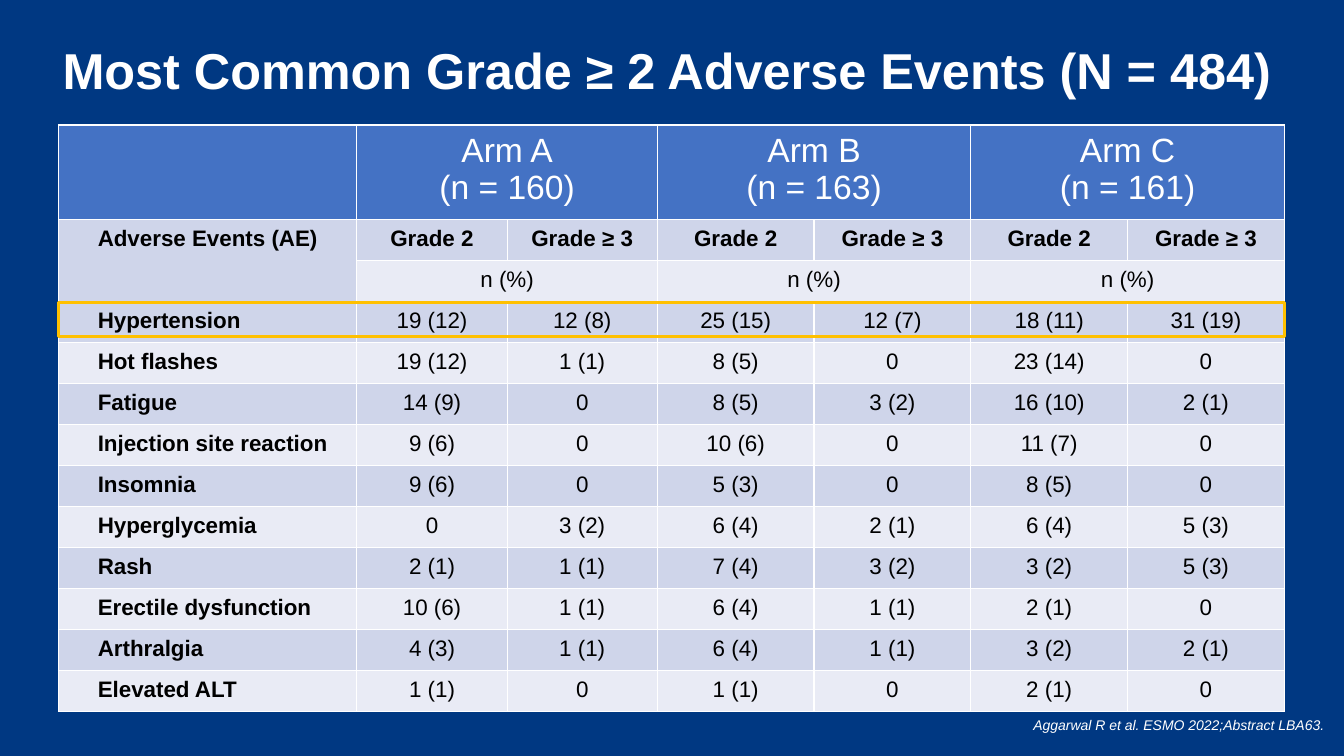
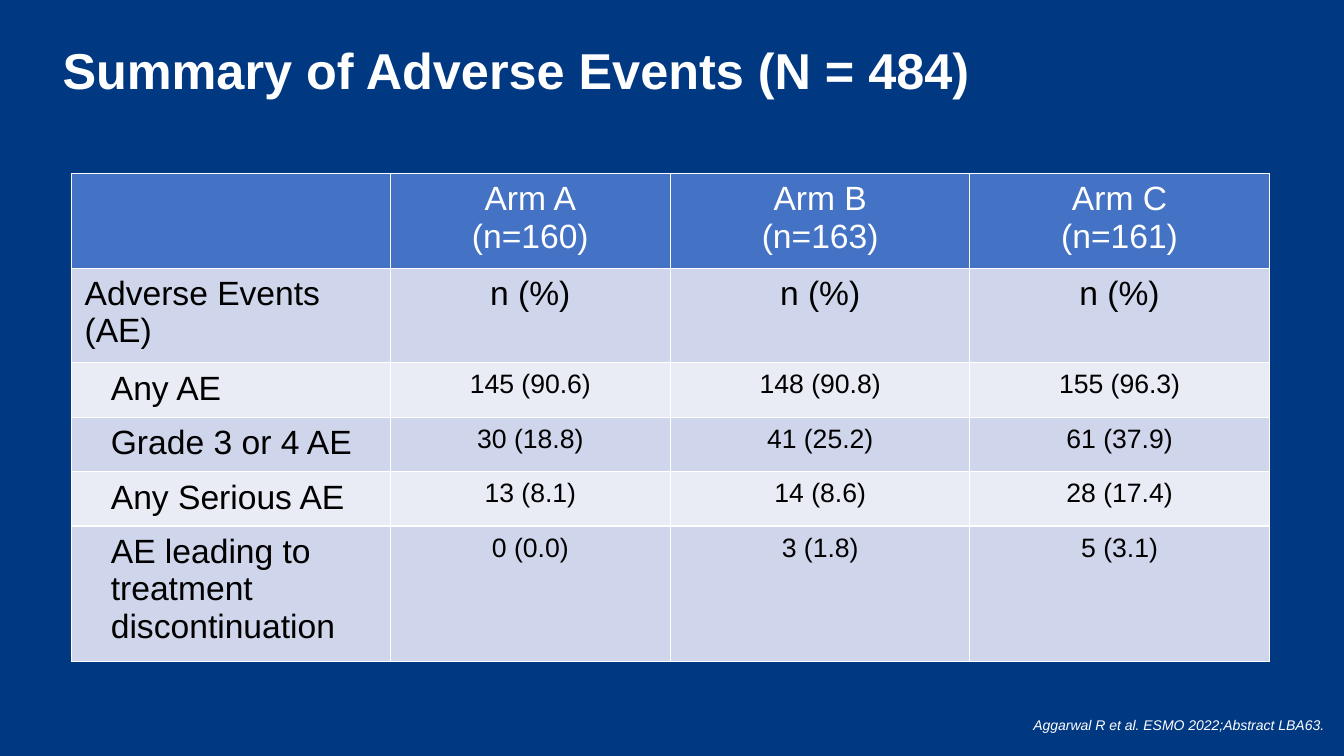
from lxml import etree
from pptx import Presentation
from pptx.dml.color import RGBColor
from pptx.enum.shapes import MSO_SHAPE
from pptx.enum.text import MSO_ANCHOR, MSO_AUTO_SIZE, PP_ALIGN
from pptx.oxml.ns import qn
from pptx.util import Inches, Pt

LEFT, CENTER, RIGHT = PP_ALIGN.LEFT, PP_ALIGN.CENTER, PP_ALIGN.RIGHT
MIDDLE = MSO_ANCHOR.MIDDLE
NO_AUTOFIT = MSO_AUTO_SIZE.NONE
RECTANGLE = MSO_SHAPE.RECTANGLE

NAVY = RGBColor(0x00, 0x38, 0x82)
BLUE = RGBColor(0x44, 0x72, 0xC4)
BAND_DARK = RGBColor(0xCF, 0xD5, 0xEA)
BAND_LIGHT = RGBColor(0xE9, 0xEB, 0xF5)
GOLD = RGBColor(0xFF, 0xC0, 0x00)
WHITE = RGBColor(0xFF, 0xFF, 0xFF)
BLACK = RGBColor(0x00, 0x00, 0x00)

FONT = "Arial"
CITATION = "Aggarwal R et al. ESMO 2022;Abstract LBA63."
TITLES = ["Most Common Grade ≥ 2 Adverse Events (N = 484)", "Summary of Adverse Events (N = 484)"]

COMMON_EVENTS = [
    ["", "Arm A\n(n = 160)", "", "Arm B\n(n = 163)", "", "Arm C\n(n = 161)", ""],
    ["Adverse Events (AE)"] + ["Grade 2", "Grade ≥ 3"] * 3,
    [""] + ["n (%)", ""] * 3,
    ["Hypertension", "19 (12)", "12 (8)", "25 (15)", "12 (7)", "18 (11)", "31 (19)"],
    ["Hot flashes", "19 (12)", "1 (1)", "8 (5)", "0", "23 (14)", "0"],
    ["Fatigue", "14 (9)", "0", "8 (5)", "3 (2)", "16 (10)", "2 (1)"],
    ["Injection site reaction", "9 (6)", "0", "10 (6)", "0", "11 (7)", "0"],
    ["Insomnia", "9 (6)", "0", "5 (3)", "0", "8 (5)", "0"],
    ["Hyperglycemia", "0", "3 (2)", "6 (4)", "2 (1)", "6 (4)", "5 (3)"],
    ["Rash", "2 (1)", "1 (1)", "7 (4)", "3 (2)", "3 (2)", "5 (3)"],
    ["Erectile dysfunction", "10 (6)", "1 (1)", "6 (4)", "1 (1)", "2 (1)", "0"],
    ["Arthralgia", "4 (3)", "1 (1)", "6 (4)", "1 (1)", "3 (2)", "2 (1)"],
    ["Elevated ALT", "1 (1)", "0", "1 (1)", "0", "2 (1)", "0"],
]
EVENT_SUMMARY = [
    ["", "Arm A\n(n=160)", "Arm B\n(n=163)", "Arm C\n(n=161)"],
    ["Adverse Events (AE)", "n (%)", "n (%)", "n (%)"],
    ["Any AE", "145 (90.6)", "148 (90.8)", "155 (96.3)"],
    ["Grade 3 or 4 AE", "30 (18.8)", "41 (25.2)", "61 (37.9)"],
    ["Any Serious AE", "13 (8.1)", "14 (8.6)", "28 (17.4)"],
    ["AE leading to treatment discontinuation", "0 (0.0)", "3 (1.8)", "5 (3.1)"],
]


def write_text(frame, text, *, size, color=WHITE, bold=False, italic=False,
               align=CENTER, indent=0, line_spacing=None):
    """Fill the frame with one paragraph for each line of text."""
    for index, line in enumerate(text.split("\n")):
        para = frame.add_paragraph() if index else frame.paragraphs[0]
        para.alignment = align
        para.line_spacing = line_spacing
        if indent:
            para._p.get_or_add_pPr().set("marL", str(Inches(indent)))
        span = para.add_run()
        span.text = line
        span.font.name = FONT
        span.font.size = Pt(size)
        span.font.bold = bold
        span.font.italic = italic
        span.font.color.rgb = color


def add_banded_table(slide, left, top, widths, heights, rows):
    """Add a table with a blue header, two band colours and white borders."""
    table = slide.shapes.add_table(
        len(rows), len(widths), Inches(left), Inches(top),
        Inches(sum(widths)), Inches(sum(heights))).table
    for column, width in zip(table.columns, widths):
        column.width = Inches(width)
    for row_index, height in enumerate(heights):
        table.rows[row_index].height = Inches(height)
        band = BAND_DARK if row_index % 2 else BAND_LIGHT
        for cell in table.rows[row_index].cells:
            cell.fill.solid()
            cell.fill.fore_color.rgb = band if row_index else BLUE
            cell.margin_left = cell.margin_right = Inches(0.13)
            cell.margin_top = cell.margin_bottom = Inches(0.07)
            properties = cell._tc.get_or_add_tcPr()
            for order, side in enumerate(("a:lnL", "a:lnR", "a:lnT", "a:lnB")):
                border = etree.Element(qn(side), w=str(Pt(1)))
                border_fill = etree.SubElement(border, qn("a:solidFill"))
                etree.SubElement(border_fill, qn("a:srgbClr"), val=str(WHITE))
                properties.insert(order, border)
    return table


deck = Presentation()
deck.slide_width = Inches(13.33)
deck.slide_height = Inches(7.5)
background = deck.slide_master.background.fill
background.solid()
background.fore_color.rgb = NAVY
title_only = deck.slide_layouts[5]

slides = []
for title_text in TITLES:
    slide = deck.slides.add_slide(title_only)
    title = slide.shapes.title
    title.left, title.top = Inches(0.52), Inches(0.41)
    title.width, title.height = Inches(12.26), Inches(0.63)
    title.text_frame.auto_size = NO_AUTOFIT
    title.text_frame.vertical_anchor = MIDDLE
    write_text(title.text_frame, title_text, size=36, bold=True, align=LEFT, line_spacing=0.9)

    citation = slide.shapes.add_textbox(Inches(10.12), Inches(7.06), Inches(3.11), Inches(0.27))
    citation.text_frame.word_wrap = True
    write_text(citation.text_frame, CITATION, size=10, italic=True, align=RIGHT)
    slides.append(slide)
common_slide, summary_slide = slides

# Most common adverse events
table_width, name_width, arm_a_width = 12.16, 2.96, 1.49
other_width = (table_width - name_width - 2 * arm_a_width) / 4
common_table = add_banded_table(
    common_slide, 0.58, 1.24, [name_width] + [arm_a_width] * 2 + [other_width] * 4,
    [0.93] + [0.4] * 12, COMMON_EVENTS)
common_table.cell(1, 0).merge(common_table.cell(2, 0))
for row_index in (0, 2):
    for col_index in (1, 3, 5):
        common_table.cell(row_index, col_index).merge(common_table.cell(row_index, col_index + 1))

for row_index, row in enumerate(COMMON_EVENTS):
    for col_index, text in enumerate(row):
        if not text:
            continue
        frame = common_table.cell(row_index, col_index).text_frame
        if row_index == 0:
            write_text(frame, text, size=24)
        elif col_index == 0 and row_index > 2:
            write_text(frame, text, size=16, color=BLACK, bold=True, align=LEFT, indent=0.26)
        else:
            write_text(frame, text, size=16, color=BLACK, bold=row_index == 1)

highlight = common_slide.shapes.add_shape(
    RECTANGLE, Inches(0.58), Inches(3), Inches(table_width), Inches(0.34))
highlight.shadow.inherit = False
highlight.fill.background()
highlight.line.color.rgb = GOLD
highlight.line.width = Pt(2.5)

# Summary of adverse events
summary_table = add_banded_table(
    summary_slide, 0.71, 1.72, [3.16, 2.78, 2.97, 2.97],
    [0.93, 0.93, 0.54, 0.54, 0.54, 1.33], EVENT_SUMMARY)
for row_index, row in enumerate(EVENT_SUMMARY):
    for col_index, text in enumerate(row):
        if not text:
            continue
        frame = summary_table.cell(row_index, col_index).text_frame
        if row_index == 0:
            write_text(frame, text, size=24)
        elif col_index == 0:
            write_text(frame, text, size=24, color=BLACK, align=LEFT,
                       indent=0.26 if row_index > 1 else 0)
        else:
            write_text(frame, text, size=24 if row_index == 1 else 19, color=BLACK)

deck.save("out.pptx")
